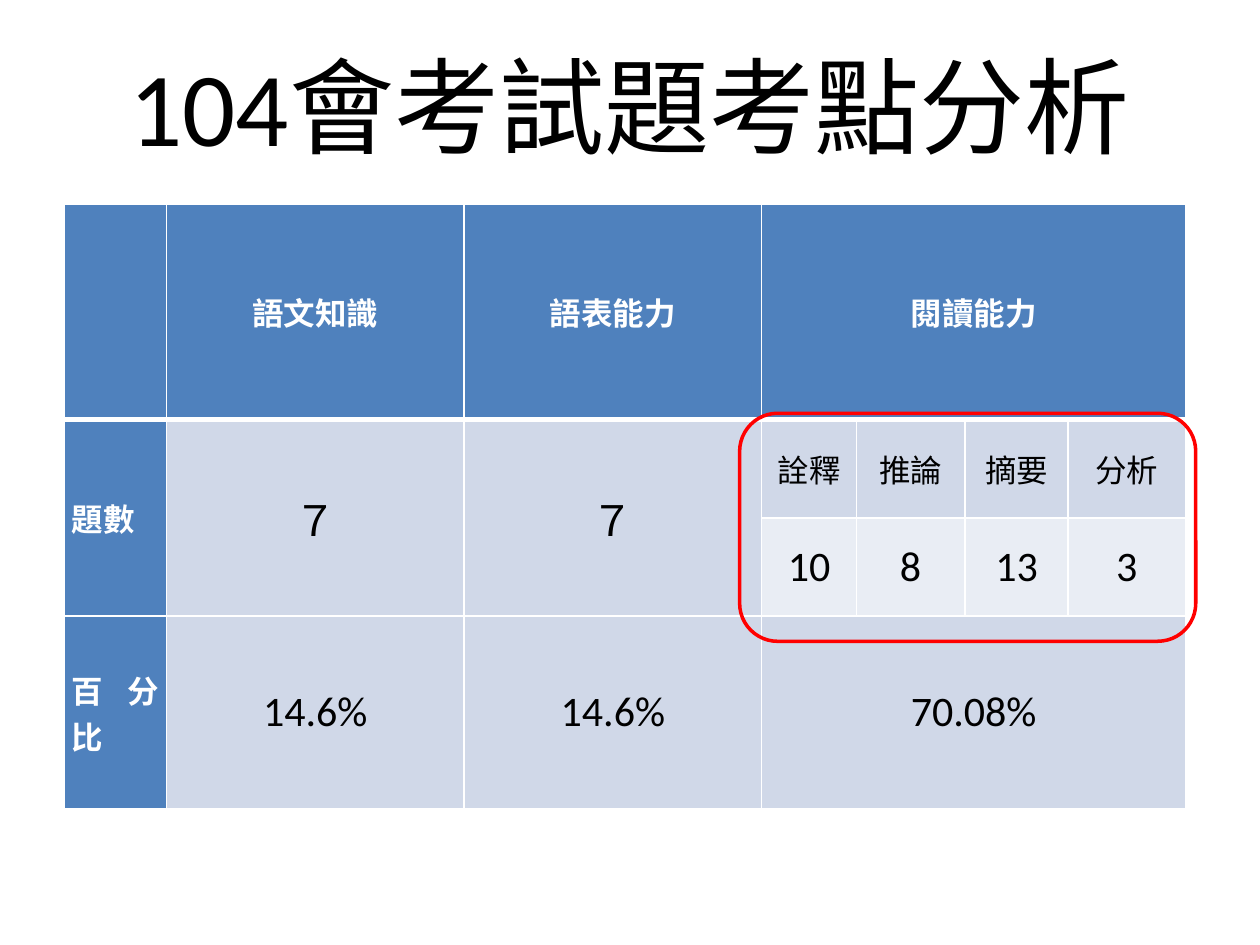
from collections import namedtuple
from dataclasses import dataclass

from lxml import etree
from pptx import Presentation
from pptx import util as u
from pptx.dml.color import RGBColor
from pptx.enum import shapes, text
from pptx.oxml.ns import qn

# The slide is a grid of 10 columns by 7.5 rows, one inch each
Box = namedtuple("Box", "left top width height")
Entry = namedtuple("Entry", "words role row_span column_span", defaults=(1, 1))
Role = namedtuple("Role", "fill color size bold align")


@dataclass(frozen=True)
class Theme:
    font: str = "Calibri"
    black: str = "000000"
    white: str = "FFFFFF"
    header: str = "4F81BD"
    band: str = "D0D8E8"
    light_band: str = "E9EDF4"
    highlight: str = "FF0000"
    title_size: int = 60
    value_size: int = 24
    label_size: int = 18
    rule: int = 1
    header_rule: int = 3
    highlight_rule: int = 2


THEME = Theme()
CENTER, JUSTIFY = text.PP_ALIGN.CENTER, text.PP_ALIGN.JUSTIFY
ROLES = {
    "head": Role(THEME.header, THEME.white, THEME.label_size, True, CENTER),
    "side": Role(THEME.header, THEME.white, THEME.label_size, True, JUSTIFY),
    "skill": Role(THEME.band, THEME.black, THEME.label_size, False, CENTER),
    "value": Role(THEME.band, THEME.black, THEME.value_size, False, CENTER),
    "count": Role(THEME.light_band, THEME.black, THEME.value_size, False, CENTER),
}
COLUMNS = [0.81, 2.36, 2.36, 0.75, 0.86, 0.82, 0.93]
ROWS = [1.71, 0.78, 0.78, 1.53]
SKILLS = [("詮釋", "10"), ("推論", "8"), ("摘要", "13"), ("分析", "3")]


def table_entries():
    """Map (row, column) to the entry that starts there."""
    entries = {
        (0, 0): Entry("", "head"),
        (0, 3): Entry("閱讀能力", "head", 1, 4),
        (1, 0): Entry("題數", "side", 2),
        (3, 0): Entry("百分比", "side"),
        (3, 3): Entry("70.08%", "value", 1, 4),
    }
    for column, heading in enumerate(["語文知識", "語表能力"], 1):
        entries[0, column] = Entry(heading, "head")
        entries[1, column] = Entry("７", "value", 2)
        entries[3, column] = Entry("14.6%", "value")
    for column, (skill, count) in enumerate(SKILLS, 3):
        entries[1, column] = Entry(skill, "skill")
        entries[2, column] = Entry(count, "count")
    return entries


def place(box):
    return [u.Inches(length) for length in box]


def add_run(paragraph, words, size, color, bold=False):
    run = paragraph.add_run()
    run.text = words
    run.font.name = THEME.font
    run.font.size = u.Pt(size)
    run.font.bold = bold
    run.font.color.rgb = RGBColor.from_string(color)


def set_borders(cell, row):
    properties = cell._tc.get_or_add_tcPr()
    thick_side = {0: "lnB", 1: "lnT"}.get(row)
    for side in ("lnL", "lnR", "lnT", "lnB"):
        width = THEME.header_rule if side == thick_side else THEME.rule
        line = etree.SubElement(properties, qn("a:" + side), w=str(u.Pt(width)))
        fill = etree.SubElement(line, qn("a:solidFill"))
        etree.SubElement(fill, qn("a:srgbClr"), val=THEME.white)


def fill_cell(cell, entry):
    role = ROLES[entry.role]
    cell.fill.solid()
    cell.fill.fore_color.rgb = RGBColor.from_string(role.fill)
    cell.vertical_anchor = text.MSO_ANCHOR.MIDDLE
    cell.margin_left = cell.margin_right = u.Inches(0.06)
    cell.margin_top = cell.margin_bottom = 0
    paragraph = cell.text_frame.paragraphs[0]
    paragraph.alignment = role.align
    if entry.words:
        add_run(paragraph, entry.words, role.size, role.color, role.bold)


def add_title(slide, box):
    frame = slide.shapes.add_textbox(*place(box)).text_frame
    frame.word_wrap = True
    add_run(frame.paragraphs[0], "104會考試題考點分析", THEME.title_size, THEME.black)


def add_score_table(slide, box):
    table = slide.shapes.add_table(len(ROWS), len(COLUMNS), *place(box)).table
    for column, share in zip(table.columns, COLUMNS):
        column.width = u.Inches(box.width * share / sum(COLUMNS))
    for row, share in zip(table.rows, ROWS):
        row.height = u.Inches(box.height * share / sum(ROWS))
    for row in range(len(ROWS)):
        for column in range(len(COLUMNS)):
            set_borders(table.cell(row, column), row)
    for (row, column), entry in table_entries().items():
        cell = table.cell(row, column)
        if entry.row_span * entry.column_span > 1:
            cell.merge(table.cell(row + entry.row_span - 1,
                                  column + entry.column_span - 1))
        fill_cell(cell, entry)


def add_highlight(slide, box):
    shape = slide.shapes.add_shape(shapes.MSO_SHAPE.ROUNDED_RECTANGLE, *place(box))
    shape.shadow.inherit = False
    shape.fill.background()
    shape.line.color.rgb = RGBColor.from_string(THEME.highlight)
    shape.line.width = u.Pt(THEME.highlight_rule)


def main():
    presentation = Presentation()
    presentation.slide_width = u.Inches(10)
    presentation.slide_height = u.Inches(7.5)
    slide = presentation.slides.add_slide(presentation.slide_layouts[6])
    # Title, table, then the frame around the reading skills
    add_title(slide, Box(0.93, 0.28, 8.43, 1.11))
    add_score_table(slide, Box(0.51, 1.62, 8.9, 4.8))
    add_highlight(slide, Box(5.87, 3.28, 3.62, 1.81))
    presentation.save("out.pptx")


if __name__ == "__main__":
    main()
